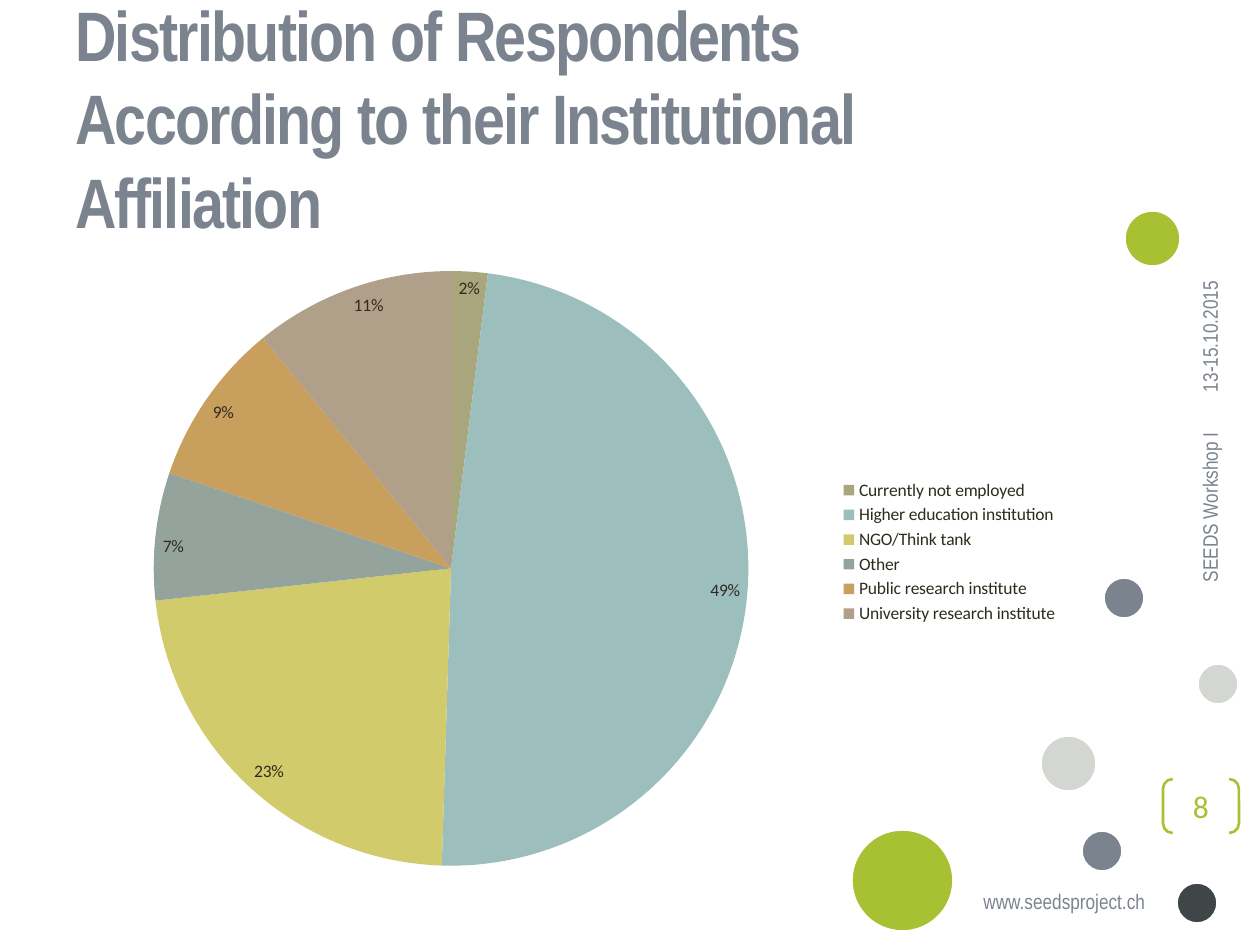
from lxml import etree
from pptx import Presentation
from pptx import util as u
from pptx.chart.data import CategoryChartData
from pptx.dml.color import RGBColor
from pptx.enum import chart as ch, shapes, text
from pptx.oxml import parse_xml
from pptx.oxml.ns import nsdecls

COLORS = {
    "green": "A7C133", "slate": "7B838F", "dark": "404548", "pale": "D4D6D2",
    "white": "FFFFFF", "ink": "2F2B20",
}
SLICES = [
    ("Currently not employed", 2, "A9A57C"),
    ("Higher education institution", 49, "9CBEBD"),
    ("NGO/Think tank", 23, "D2CB6C"),
    ("Other", 7, "95A39D"),
    ("Public research institute", 9, "C89F5D"),
    ("University research institute", 11, "B1A089"),
]
CIRCLES = [
    (851, 829, 103, "green"), (1124, 210, 57, "green"), (1176, 882, 42, "dark"),
    (1040, 735, 57, "pale"), (1197, 663, 42, "pale"),
    (1081, 830, 42, "slate"), (1103, 577, 42, "slate"),
]
PLOT = {"x": 0.09, "y": 0.07, "w": 0.59, "h": 0.91}
MID = text.MSO_ANCHOR.MIDDLE
ALIGN = text.PP_ALIGN


def rgb(name):
    return RGBColor.from_string(COLORS.get(name, name))


class Deck:
    SCALE = 914400 / 126
    LABEL = {"size": u.Pt(12), "name": "Arial Narrow"}

    def __init__(self, w, h):
        self.prs = Presentation()
        self.prs.slide_width, self.prs.slide_height = self.emu(w, h)
        self.s = self.prs.slides.add_slide(self.prs.slide_layouts[6])

    def emu(self, *px):
        return [u.Emu(round(v * self.SCALE)) for v in px]

    def put_text(self, sp, words, color, font, frame=None, align=ALIGN.LEFT, spc=None):
        tf = sp.text_frame
        for key, value in {"word_wrap": True, **(frame or {})}.items():
            setattr(tf, key, value)
        p = tf.paragraphs[0]
        p.alignment = align
        r = p.add_run()
        r.text = words
        for key, value in font.items():
            setattr(r.font, key, value)
        r.font.color.rgb = rgb(color)
        if spc is not None:
            r.font._element.set("spc", str(spc))

    def label(self, box, words, font=None, rotation=0, **style):
        sp = self.s.shapes.add_textbox(*self.emu(*box))
        sp.rotation = rotation
        self.put_text(sp, words, "slate", font or self.LABEL, **style)

    def circle(self, x, y, d, color):
        sp = self.s.shapes.add_shape(shapes.MSO_SHAPE.OVAL, *self.emu(x, y, d, d))
        sp.shadow.inherit = False
        sp.fill.solid()
        sp.fill.fore_color.rgb = rgb(color)
        sp.line.color.rgb = rgb("white")
        sp.line.width = u.Pt(2)

    def page_number(self, box, words):
        sp = self.s.shapes.add_shape(shapes.MSO_SHAPE.DOUBLE_BRACKET, *self.emu(*box))
        sp.shadow.inherit = False
        sp.adjustments[0] = 0.18
        sp.fill.background()
        sp.line.color.rgb = rgb("green")
        sp.line.width = u.Pt(1.5)
        frame = {f"margin_{side}": 0 for side in ("left", "top", "right", "bottom")}
        self.put_text(sp, words, "green", {"size": u.Pt(18), "name": "Calibri"},
                      {**frame, "vertical_anchor": MID}, ALIGN.CENTER)

    def pie(self, box, slices):
        data = CategoryChartData()
        data.categories = [name for name, _, _ in slices]
        data.add_series("Series 1", [value for _, value, _ in slices])
        chart = self.s.shapes.add_chart(
            ch.XL_CHART_TYPE.PIE, *self.emu(*box), data).chart
        for key, value in {"size": u.Pt(10), "name": "Calibri"}.items():
            setattr(chart.font, key, value)
        chart.font.color.rgb = rgb("ink")
        chart.has_title = False
        chart.has_legend = True
        chart.legend.position = ch.XL_LEGEND_POSITION.RIGHT
        chart.legend.include_in_layout = False
        plot = chart.plots[0]
        plot.vary_by_categories = True
        plot.has_data_labels = True
        labels = {"show_percentage": True, "show_value": False, "number_format": "0%",
                  "number_format_is_linked": False,
                  "position": ch.XL_LABEL_POSITION.INSIDE_END}
        for key, value in labels.items():
            setattr(plot.data_labels, key, value)
        for i, (_, _, color) in enumerate(slices):
            fill = plot.series[0].points[i].format.fill
            fill.solid()
            fill.fore_color.rgb = rgb(color)
        self.place_plot(chart)

    def place_plot(self, chart):
        area = chart._chartSpace.chart.plotArea
        for old in area.xpath("c:layout"):
            area.remove(old)
        layout = parse_xml(f"<c:layout {nsdecls('c')}><c:manualLayout/></c:layout>")
        values = {"layoutTarget": "inner", "xMode": "edge", "yMode": "edge", **PLOT}
        ns = layout.nsmap["c"]
        for tag, value in values.items():
            etree.SubElement(layout[0], f"{{{ns}}}{tag}").set("val", str(value))
        area.insert(0, layout)


def main():
    deck = Deck(1260, 945)
    for circle in CIRCLES:
        deck.circle(*circle)
    deck.label((971, 882, 194, 38), "www.seedsproject.ch", frame={
        "word_wrap": False, "auto_size": text.MSO_AUTO_SIZE.SHAPE_TO_FIT_TEXT})
    deck.page_number((1163, 779, 76, 54), "8")
    middle = {"vertical_anchor": MID}
    deck.label((1099, 508, 221, 45), "SEEDS Workshop I", rotation=270,
               frame=middle, align=ALIGN.RIGHT)
    deck.label((1128, 302, 163, 42), "13-15.10.2015", rotation=270, frame=middle)
    deck.label((63, 38, 1008, 158),
               "Distribution of Respondents According to their Institutional Affiliation",
               {"size": u.Pt(40), "name": "Arial Narrow", "bold": True},
               frame=middle, spc=-100)
    deck.pie((63, 221, 1008, 662), SLICES)
    deck.prs.save("out.pptx")


if __name__ == "__main__":
    main()
